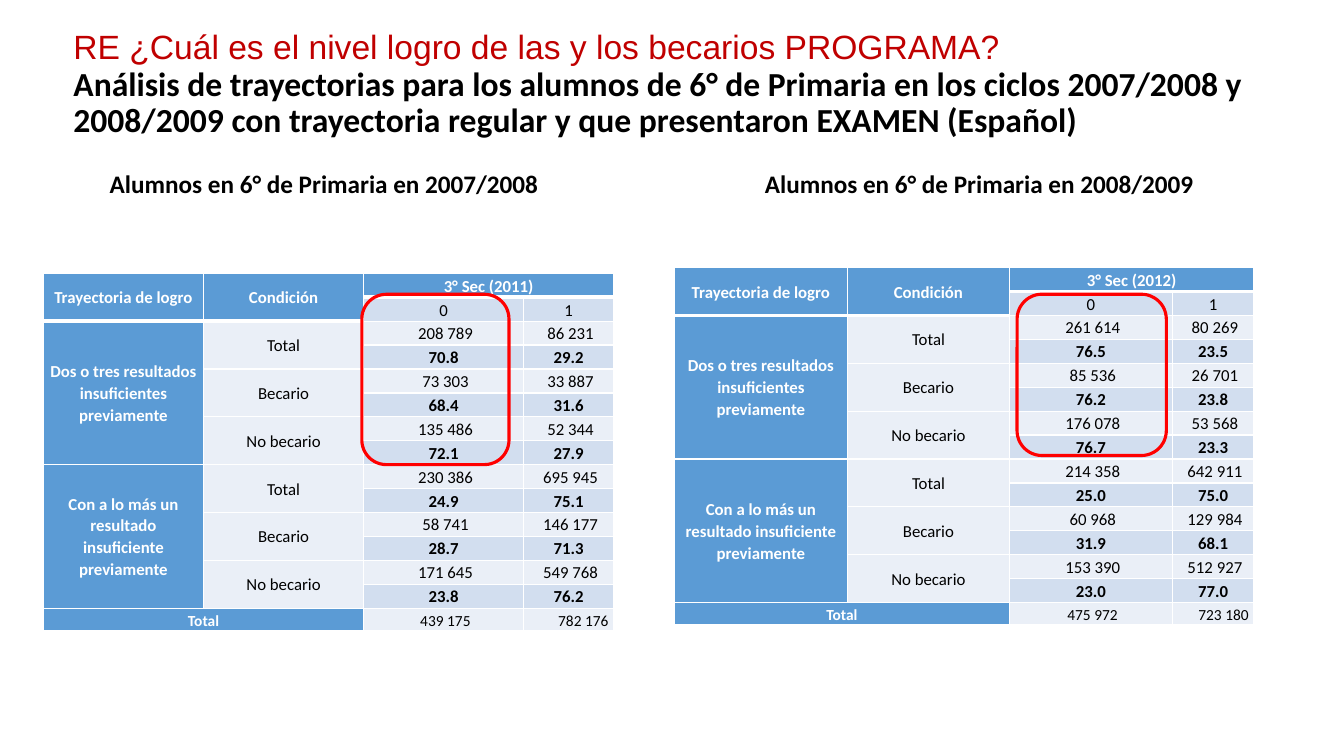
from lxml.etree import SubElement
from pptx import Presentation
from pptx.dml.color import RGBColor
from pptx.enum.shapes import MSO_SHAPE as Shape
from pptx.enum.text import MSO_ANCHOR as Anchor, PP_ALIGN as Align
from pptx.oxml.ns import qn
from pptx.util import Pt

COLORS = {"black": "000000", "white": "FFFFFF", "title": "C00000", "ring": "FF0000",
          "header": "5B9BD5", "band": "D2DEEF", "light": "EAEFF7"}
PATHS = ["Dos o tres resultados insuficientes previamente",
         "Con a lo más un resultado insuficiente previamente"]
CONDITIONS = ["Total", "Becario", "No becario"]
RESULTS_2011 = [
    ("208 789", "86 231", "70.8", "29.2"), ("73 303", "33 887", "68.4", "31.6"),
    ("135 486", "52 344", "72.1", "27.9"), ("230 386", "695 945", "24.9", "75.1"),
    ("58 741", "146 177", "28.7", "71.3"), ("171 645", "549 768", "23.8", "76.2")]
RESULTS_2012 = [
    ("261 614", "80 269", "76.5", "23.5"), ("85 536", "26 701", "76.2", "23.8"),
    ("176 078", "53 568", "76.7", "23.3"), ("214 358", "642 911", "25.0", "75.0"),
    ("60 968", "129 984", "31.9", "68.1"), ("153 390", "512 927", "23.0", "77.0")]


def color(name):
    return RGBColor.from_string(COLORS[name])


def style_font(para, size, ink, bold=False, name="Calibri"):
    para.font.name = name
    para.font.size = Pt(size)
    para.font.bold = bold
    para.font.color.rgb = color(ink)


def add_text(page, left, top, width, height, wrap=True):
    box = page.shapes.add_textbox(Pt(left), Pt(top), Pt(width), Pt(height))
    box.text_frame.word_wrap = wrap
    return box.text_frame


def add_title(page, left, top, width, height):
    frame = add_text(page, left, top, width, height)
    frame.vertical_anchor = Anchor.MIDDLE
    question, subject = frame.paragraphs[0], frame.add_paragraph()
    question.text = "RE ¿Cuál es el nivel logro de las y los becarios PROGRAMA?"
    subject.text = ("Análisis de trayectorias para los alumnos de 6° de Primaria en los ciclos "
                    "2007/2008 y 2008/2009 con trayectoria regular y que presentaron EXAMEN (Español)")
    style_font(question, 24, "title", name="Arial")
    style_font(subject, 24, "black", bold=True)
    question.line_spacing = subject.line_spacing = 0.9


def add_caption(page, left, top, width, height, cycle, wrap):
    para = add_text(page, left, top, width, height, wrap).paragraphs[0]
    para.text = f"Alumnos en 6° de Primaria en {cycle}"
    style_font(para, 18, "black", bold=True)


def set_borders(cell, bottom):
    props = cell._tc.get_or_add_tcPr()
    for index, (side, width) in enumerate(zip("LRTB", (1, 1, 1, bottom))):
        line = props.makeelement(qn(f"a:ln{side}"), {"w": str(Pt(width))})
        fill = SubElement(line, qn("a:solidFill"))
        SubElement(fill, qn("a:srgbClr"), val=COLORS["white"])
        props.insert(index, line)


def fill_cell(cell, text, fill, bold=False, size=12, anchor=Anchor.MIDDLE, align=Align.CENTER):
    cell.text = text
    cell.fill.solid()
    cell.fill.fore_color.rgb = color(fill)
    cell.vertical_anchor = anchor
    cell.margin_left = cell.margin_right = Pt(3.6)
    cell.margin_top = cell.margin_bottom = 0
    para = cell.text_frame.paragraphs[0]
    para.alignment = align
    para.line_spacing = 1.07
    heading = fill == "header"
    style_font(para, size, "white" if heading else "black", bold or heading)


def add_results(page, left, top, widths, year, results, totals):
    heights = [16.9] + [17.1] * 13 + [15.8]
    table = page.shapes.add_table(len(heights), len(widths), Pt(left), Pt(top),
                                  Pt(sum(widths)), Pt(sum(heights))).table
    table.first_row = table.horz_banding = False
    for column, width in zip(table.columns, widths):
        column.width = Pt(width)
    for row, height in zip(table.rows, heights):
        row.height = Pt(height)
    for cell in table.iter_cells():
        fill_cell(cell, "", "light")

    def put(row, column, text, fill, rows=1, columns=1, **look):
        cell = table.cell(row, column)
        fill_cell(cell, text, fill, **look)
        if rows * columns > 1:
            cell.merge(table.cell(row + rows - 1, column + columns - 1))

    put(0, 0, "Trayectoria de logro", "header", rows=2)
    put(0, 1, "Condición", "header", rows=2)
    put(0, 2, f"3° Sec ({year})", "header", columns=2, anchor=Anchor.BOTTOM)
    for column, level in ((2, "0"), (3, "1")):
        put(1, column, level, "band", anchor=Anchor.BOTTOM)
    for index, label in enumerate(PATHS):
        put(2 + 6 * index, 0, label, "header", rows=6)
    for index, values in enumerate(results):
        row = 2 + 2 * index
        put(row, 1, CONDITIONS[index % 3], "light", rows=2)
        for level in range(2):
            put(row, 2 + level, f" {values[level]}", "light")
            put(row + 1, 2 + level, values[2 + level], "band", bold=True)
    put(14, 0, "Total", "header", columns=2, size=11, anchor=Anchor.BOTTOM)
    for column, total, align in zip((2, 3), totals, (Align.CENTER, Align.RIGHT)):
        put(14, column, f" {total}", "light", size=11, anchor=Anchor.BOTTOM, align=align)

    for row in range(len(heights)):
        for column in range(len(widths)):
            thick = row == 0 or (row == 1 and column < 2)
            set_borders(table.cell(row, column), 3 if thick else 1)


def add_ring(page, left, top, width, height):
    ring = page.shapes.add_shape(Shape.ROUNDED_RECTANGLE, Pt(left), Pt(top), Pt(width), Pt(height))
    ring.shadow.inherit = False
    ring.fill.background()
    ring.line.color.rgb = color("ring")
    ring.line.width = Pt(2.25)


def main():
    deck = Presentation()
    deck.slide_width, deck.slide_height = Pt(960), Pt(540)
    page = deck.slides.add_slide(deck.slide_layouts[6])
    add_caption(page, 71.3, 116.6, 339, 29, "2007/2008", wrap=True)
    add_caption(page, 539.3, 116.6, 333, 29, "2008/2009", wrap=False)
    add_results(page, 31, 195.4, [114.4, 114.4, 114.4, 64.2], 2011,
                RESULTS_2011, ("439 175", "782 176"))
    add_results(page, 481.7, 191.3, [123.7, 115.7, 116.3, 58.3], 2012,
                RESULTS_2012, ("475 972", "723 180"))
    add_ring(page, 258.5, 210.2, 105.1, 121.7)
    add_ring(page, 726.5, 210.2, 106.6, 115.2)
    add_title(page, 45.4, 20.2, 884, 81.4)
    deck.save("out.pptx")


if __name__ == "__main__":
    main()
